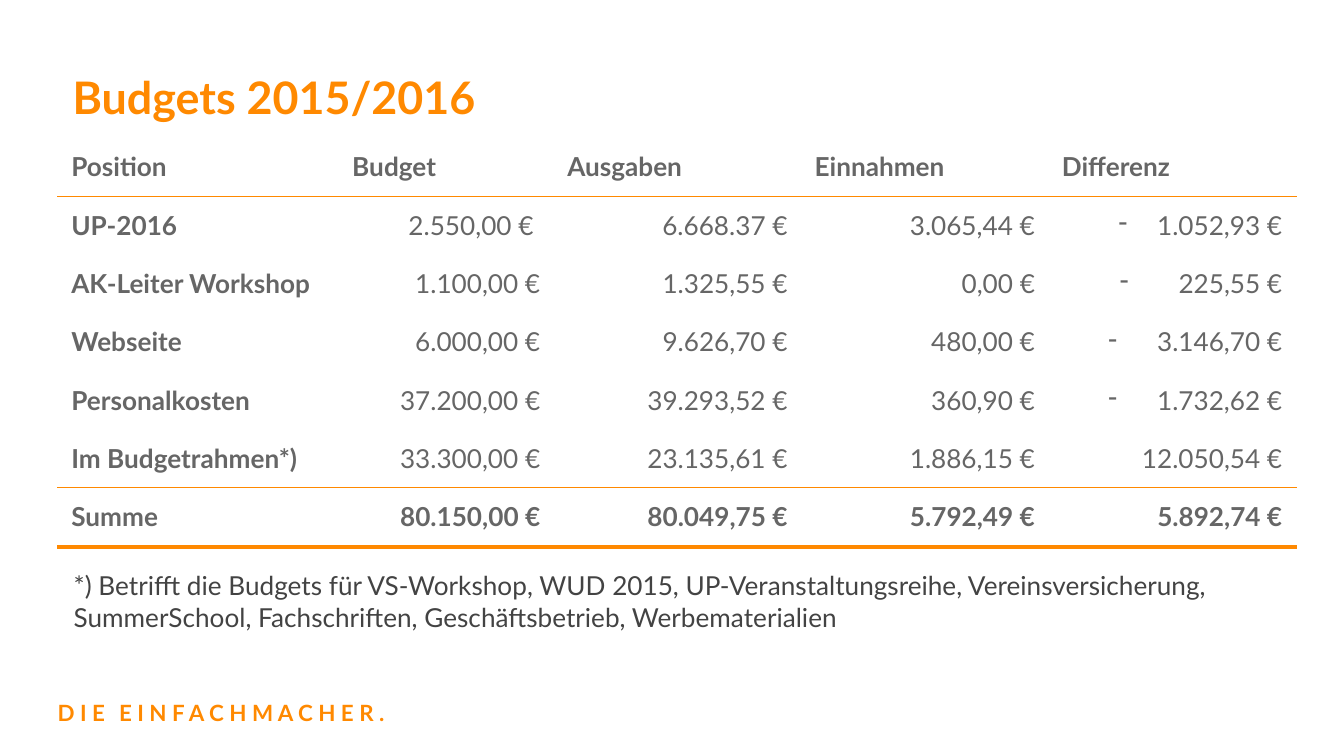
"""Build the budget overview slide for 2015/2016."""
from lxml import etree
from pptx import Presentation
from pptx.dml.color import RGBColor
from pptx.enum import text as t
from pptx.oxml import ns
from pptx.util import Pt

THEME = {
    "font": "Lato",
    "accent": "FF8900", "table": "666666", "note": "434343",
    "title": 24, "body": 14, "foot": 12,
    "pad": 7.2, "thin": 0.75, "thick": 2.25,
}

TITLE = "Budgets 2015/2016"
HEAD = ["Position", "Budget", "Ausgaben", "Einnahmen", "Differenz"]
ROWS = [
    ["UP-2016", "2.550,00 € ", "6.668.37 €", "3.065,44 €", "1.052,93 €"],
    ["AK-Leiter Workshop", "1.100,00 €", "1.325,55 €", "0,00 €", "225,55 €"],
    ["Webseite", "6.000,00 €", "9.626,70 €", "480,00 €", "3.146,70 €"],
    ["Personalkosten", "37.200,00 €", "39.293,52 €", "360,90 €", "1.732,62 €"],
    ["Im Budgetrahmen*)", "33.300,00 €", "23.135,61 €", "1.886,15 €", "12.050,54 €"],
]
TOTAL = ["Summe", "80.150,00 €", "80.049,75 €", "5.792,49 €", "5.892,74 €"]
NOTE = ("*) Betrifft die Budgets für VS-Workshop, WUD 2015, UP-Veranstaltungsreihe, "
        "Vereinsversicherung, SummerSchool, Fachschriften, Geschäftsbetrieb, "
        "Werbematerialien")
MOTTO = ["D I E", "E I N F A C H M A C H E R ."]

DASH_GAPS = {1: 20.7, 2: 31.5, 3: 26.1, 4: 26.1}
WIDTHS = [150.5, 115.2] + [132.5] * 3
HEIGHTS = [31.7] + [30.2] * 5 + [31.7]
BOXES = {
    "title": (31.7, 25.9, 662.4, 46.1),
    "table": (31, 73.4, sum(WIDTHS), sum(HEIGHTS)),
    "note": (32.4, 298.1, 662.4, 62.6),
    "motto": (23.8, 367.2, 223.2, 29.5),
}


def add(par, words, size, color, bold=False):
    run = par.add_run()
    run.text = words
    look = {"name": THEME["font"], "size": Pt(THEME[size]), "bold": bold}
    for key, val in look.items():
        setattr(run.font, key, val)
    run.font.color.rgb = RGBColor.from_string(THEME[color])
    return run


def frame(box):
    body = box.text_frame
    look = {"word_wrap": True, "auto_size": t.MSO_AUTO_SIZE.NONE,
            "vertical_anchor": t.MSO_ANCHOR.TOP}
    look.update({"margin_" + side: Pt(THEME["pad"])
                 for side in ("left", "right", "top", "bottom")})
    for key, val in look.items():
        setattr(body, key, val)
    par = body.paragraphs[0]
    par.alignment = t.PP_ALIGN.LEFT
    return par


def place(slide, name):
    return slide.shapes.add_textbox(*map(Pt, BOXES[name]))


def tint(parent):
    etree.SubElement(parent, ns.qn("a:srgbClr"), val=THEME["table"])


def dash(par, gap):
    props = par._p.get_or_add_pPr()
    props.set("marL", str(Pt(36)))
    props.set("indent", str(-Pt(gap)))
    tint(etree.SubElement(props, ns.qn("a:buClr")))
    etree.SubElement(props, ns.qn("a:buChar"), char="-")


def rule(cell, side, width):
    props = cell._tc.get_or_add_tcPr()
    line = etree.SubElement(props, ns.qn("a:ln" + side), w=str(Pt(width)))
    fill = etree.SubElement(line, ns.qn("a:solidFill"))
    etree.SubElement(fill, ns.qn("a:srgbClr"), val=THEME["accent"])


def fill_cell(cell, words, row, col, last):
    for side in ("left", "right", "top", "bottom"):
        setattr(cell, "margin_" + side, Pt(THEME["pad"]))
    par = cell.text_frame.paragraphs[0]
    if row and col:
        par.alignment = t.PP_ALIGN.RIGHT
    if col == len(HEAD) - 1 and row in DASH_GAPS:
        dash(par, DASH_GAPS[row])
    add(par, words, "body", "table", row in (0, last) or col == 0)
    if row in (1, last):
        rule(cell, "T", THEME["thin"])
    if row in (0, last - 1, last):
        rule(cell, "B", THEME["thick" if row == last else "thin"])
    cell.fill.background()


def add_budget(slide):
    data = [HEAD, *ROWS, TOTAL]
    table = slide.shapes.add_table(
        len(data), len(HEAD), *map(Pt, BOXES["table"])).table
    table.first_row = table.horz_banding = False
    for col, width in zip(table.columns, WIDTHS):
        col.width = Pt(width)
    for row, height in zip(table.rows, HEIGHTS):
        row.height = Pt(height)
    for row, line in enumerate(data):
        for col, words in enumerate(line):
            fill_cell(table.cell(row, col), words, row, col, len(data) - 1)


def main():
    deck = Presentation()
    deck.slide_width, deck.slide_height = Pt(720), Pt(405)
    slide = deck.slides.add_slide(deck.slide_layouts[5])

    motto = frame(place(slide, "motto"))
    add(motto, MOTTO[0], "foot", "accent", True)
    gap = add(motto, " ", "foot", "accent", True)
    gap.font._element.set("spc", "460")
    add(motto, MOTTO[1], "foot", "accent", True)

    title = slide.shapes.title
    for key, val in zip(("left", "top", "width", "height"), BOXES["title"]):
        setattr(title, key, Pt(val))
    par = frame(title)
    par.line_spacing = 1.15
    add(par, TITLE, "title", "accent", True)

    add_budget(slide)
    add(frame(place(slide, "note")), NOTE, "body", "note")
    deck.save("out.pptx")


if __name__ == "__main__":
    main()
